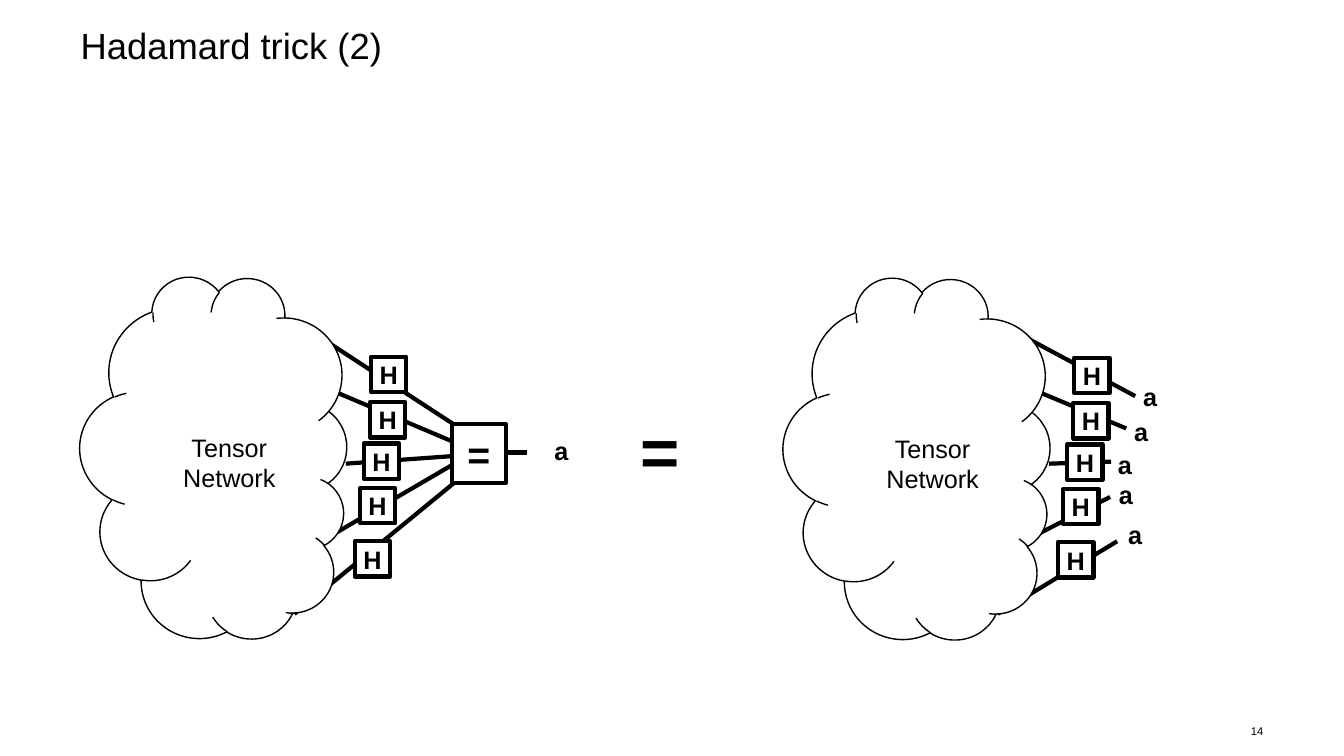
from dataclasses import dataclass

from lxml import etree
from pptx import Presentation
from pptx.dml.color import RGBColor
from pptx.enum.shapes import MSO_CONNECTOR, MSO_SHAPE
from pptx.enum.text import MSO_ANCHOR, MSO_AUTO_SIZE, PP_ALIGN
from pptx.oxml.ns import qn
from pptx.util import Inches, Length, Pt

BLACK = RGBColor(0x00, 0x00, 0x00)
WHITE = RGBColor(0xFF, 0xFF, 0xFF)
FONT = "Arial"
LEFT, CENTER, RIGHT = PP_ALIGN.LEFT, PP_ALIGN.CENTER, PP_ALIGN.RIGHT
TOP, MIDDLE = MSO_ANCHOR.TOP, MSO_ANCHOR.MIDDLE
STRAIGHT = MSO_CONNECTOR.STRAIGHT
RECTANGLE, CLOUD = MSO_SHAPE.RECTANGLE, MSO_SHAPE.CLOUD
FIXED_SIZE = MSO_AUTO_SIZE.NONE

CELL = Inches(0.1)  # the slide is a grid of 133.3 columns by 75 rows
GATE_SIZE = 3.5
INSET = 1  # standard left and right margin of a text box
RIGHT_PANEL = (69.75, 0.1)  # shift from the left network to the right one

Point = tuple[float, float]


@dataclass(frozen=True)
class Area:
    column: float
    row: float
    width: float
    height: float

    def shifted(self, shift: Point) -> "Area":
        return Area(self.column + shift[0], self.row + shift[1], self.width, self.height)

    def lengths(self) -> list[Length]:
        return [cells(n) for n in (self.column, self.row, self.width, self.height)]


@dataclass(frozen=True)
class Leg:
    """One wire of the network with its H gate; gate and label are top left corners."""
    start: Point
    gate: Point
    merged_end: Point
    open_end: Point
    label: Point


LEGS = [
    Leg((30.9, 32.9), (36.8, 35.4), (47, 43.4), (112.6, 39.3), (112.4, 37.3)),
    Leg((33.3, 38.9), (36.7, 39.9), (47, 44.7), (111.7, 42.5), (111.5, 40.8)),
    Leg((34.3, 46), (36.1, 44), (47, 45.1), (110.2, 45.8), (109.9, 44.1)),
    Leg((32.4, 53.4), (35.7, 48.4), (46.1, 45.4), (110.1, 49.3), (110, 47.1)),
    Leg((29.2, 60.9), (35.2, 53.7), (47, 46.3), (110.8, 53.7), (110.9, 51)),
]
CLOUD_AREA = Area(3.4, 31.9, 36.1, 27)
CLOUD_TURN = 99.4
CLOUD_LABEL = Area(17.1, 42.4, 11.3, 7.1)


def cells(count: float) -> Length:
    return Length(round(count * CELL))


def write_text(frame, text: str, *, size: float = 18, bold: bool = False,
               align=LEFT, anchor=TOP, inset: float = 0, wrap: bool = False,
               line_spacing: float = 1.0) -> None:
    frame.word_wrap = wrap
    frame.auto_size = FIXED_SIZE
    frame.vertical_anchor = anchor
    frame.margin_left = frame.margin_right = cells(inset)
    frame.margin_top = frame.margin_bottom = cells(inset / 2)
    frame.text = text
    for para in frame.paragraphs:
        para.alignment = align
        para.line_spacing = line_spacing
        para.font.name = FONT
        para.font.size = Pt(size)
        para.font.bold = bold
        para.font.color.rgb = BLACK


def add_text(page, area: Area, text: str, **text_format) -> None:
    box = page.shapes.add_textbox(*area.lengths())
    write_text(box.text_frame, text, **text_format)


def add_outlined(page, kind, area: Area, line_width: float):
    shape = page.shapes.add_shape(kind, *area.lengths())
    shape.shadow.inherit = False
    shape.fill.solid()
    shape.fill.fore_color.rgb = WHITE
    shape.line.color.rgb = BLACK
    shape.line.width = Pt(line_width)
    return shape


def add_gate(page, area: Area, text: str, size: float = 18) -> None:
    gate = add_outlined(page, RECTANGLE, area, 3)
    write_text(gate.text_frame, text, size=size, bold=True, align=CENTER, anchor=MIDDLE)


def add_wire(page, start: Point, end: Point) -> None:
    wire = page.shapes.add_connector(STRAIGHT, *[cells(n) for n in (*start, *end)])
    wire.line.color.rgb = BLACK
    wire.line.width = Pt(3)
    etree.SubElement(wire._element.spPr, qn("a:effectLst"))


def add_index(page, corner: Point) -> None:
    add_text(page, Area(*corner, 3.4, 4), "a", bold=True, inset=INSET)


def add_gates(page, shift: Point) -> None:
    for leg in LEGS:
        add_gate(page, Area(*leg.gate, GATE_SIZE, GATE_SIZE).shifted(shift), "H")


def add_cloud(page, shift: Point) -> None:
    cloud = add_outlined(page, CLOUD, CLOUD_AREA.shifted(shift), 1)
    cloud.rotation = CLOUD_TURN
    add_text(page, CLOUD_LABEL.shifted(shift), "Tensor\nNetwork", align=CENTER, inset=INSET)


def add_merged_network(page) -> None:
    """Left side: all legs meet in one equality node."""
    for leg in LEGS:
        add_wire(page, leg.start, leg.merged_end)
    add_wire(page, (49.8, 44.9), (52.3, 44.9))
    add_gate(page, Area(44.8, 42.1, 5.4, 5.8), "=", size=28)
    add_gates(page, (0, 0))
    add_index(page, (54, 42.7))
    add_cloud(page, (0, 0))


def add_open_network(page) -> None:
    """Right side: every leg ends in its own index."""
    for leg in LEGS:
        add_wire(page, (leg.start[0] + RIGHT_PANEL[0], leg.start[1]), leg.open_end)
    add_gates(page, RIGHT_PANEL)
    for leg in LEGS:
        add_index(page, leg.label)
    add_cloud(page, RIGHT_PANEL)


def main() -> None:
    deck = Presentation()
    deck.slide_width, deck.slide_height = Inches(13.33), Inches(7.5)
    page = deck.slides.add_slide(deck.slide_layouts.get_by_name("Title Only"))

    title = page.shapes.title
    title.left, title.top, title.width, title.height = Area(8, 2.8, 117.3, 9.8).lengths()
    write_text(title.text_frame, "Hadamard trick (2)", size=26, wrap=True, line_spacing=0.9)

    add_merged_network(page)
    add_text(page, Area(62.5, 40.1, 5.9, 9.1), "=", size=48, bold=True, inset=INSET)
    add_open_network(page)
    add_text(page, Area(121.8, 71.3, 3.5, 2.4), "14", size=8, align=RIGHT,
             anchor=MIDDLE, wrap=True)
    deck.save("out.pptx")


if __name__ == "__main__":
    main()
